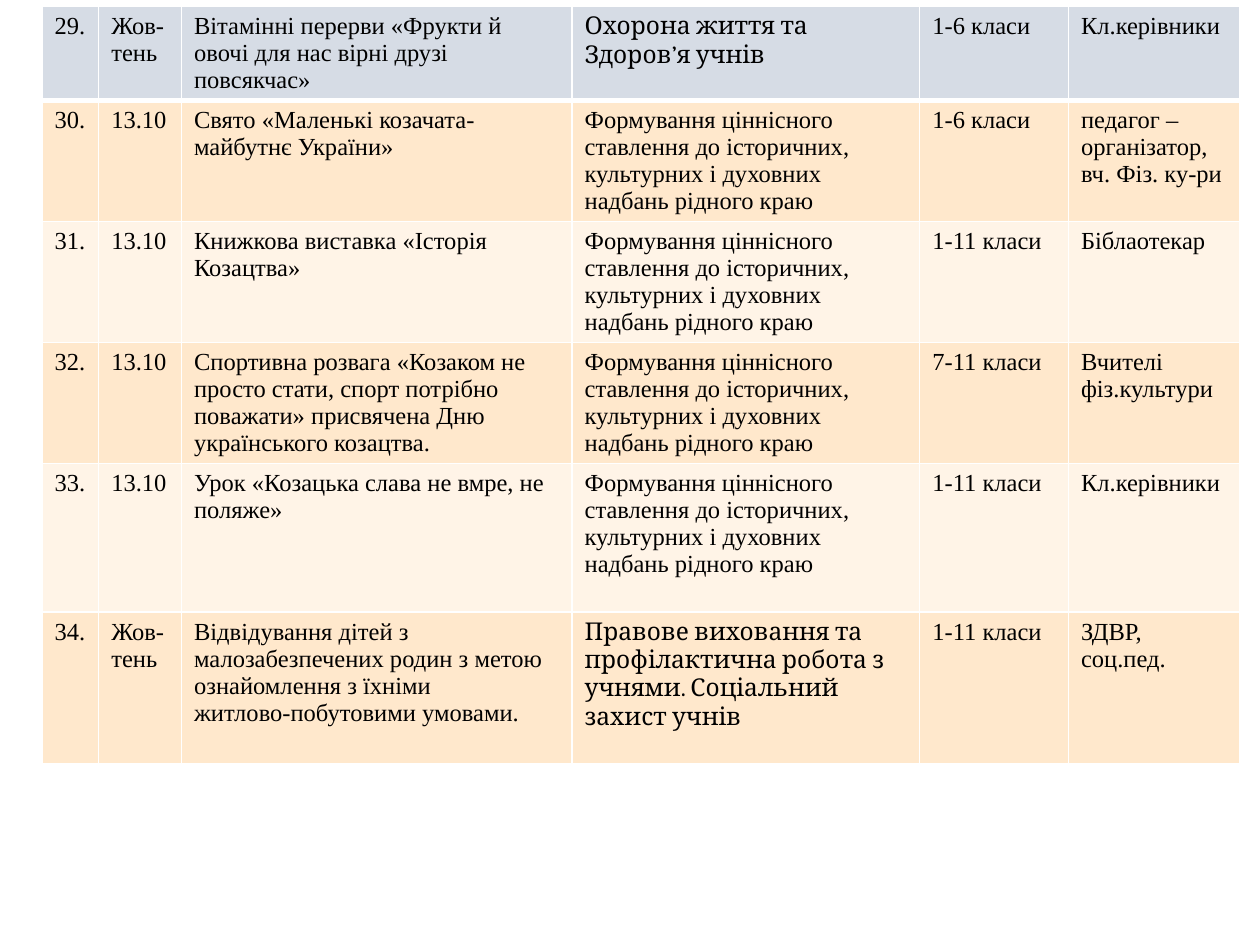
from lxml.etree import SubElement
from pptx import Presentation
from pptx.dml.color import RGBColor
from pptx.oxml.ns import qn
from pptx.util import Pt

COLORS = {"text": "000000", "border": "FFFFFF", "head": "D6DCE5",
          "dark": "FFE8CC", "light": "FFF4E7"}
FONT, GOAL_FONT = "Times New Roman", "Cambria"

# Content: number, date, event, goal, classes, responsible; "\n" splits paragraphs
HERITAGE = ("Формування ціннісного ставлення до історичних,\n"
            "культурних і духовних надбань рідного краю")
EVENTS = [
    ("29.", "Жов-тень", "Вітамінні перерви «Фрукти й овочі для нас вірні друзі повсякчас»",
     "Охорона життя та Здоров’я учнів", "1-6 класи", "Кл.керівники"),
    ("30.", "13.10", "Свято «Маленькі козачата-майбутнє України»",
     HERITAGE, "1-6 класи", "педагог –організатор, вч. Фіз. ку-ри"),
    ("31.", "13.10", "Книжкова виставка «Історія Козацтва»",
     HERITAGE, "1-11 класи", "Біблаотекар"),
    ("32.", "13.10", "Спортивна розвага «Козаком не просто стати, спорт потрібно "
     "поважати» присвячена Дню українського козацтва.",
     HERITAGE, "7-11 класи", "Вчителі фіз.культури"),
    ("33.", "13.10", "Урок «Козацька слава не вмре, не поляже»",
     HERITAGE, "1-11 класи", "Кл.керівники"),
    ("34.", "Жов-тень", "Відвідування дітей з малозабезпечених родин з метою "
     "ознайомлення з їхніми\nжитлово-побутовими умовами.",
     "Правове виховання та профілактична робота з учнями. Соціальний захист учнів",
     "1-11 класи", "ЗДВР, соц.пед."),
]
LEFT, TOP = 24, 3.75
COL_WIDTHS = [32.4, 47.3, 223.2, 198.7, 85, 97.6]
ROW_HEIGHTS = [53, 69, 69, 69, 85, 86.5]
GOAL_COL = 3


def set_borders(cell, widths):
    """Draw the cell's edges; widths maps an edge letter to points."""
    tc_pr = cell._tc.get_or_add_tcPr()
    for edge in "LRTB":
        ln = SubElement(tc_pr, qn(f"a:ln{edge}"), w=str(Pt(widths.get(edge, 1))))
        fill = SubElement(ln, qn("a:solidFill"))
        SubElement(fill, qn("a:srgbClr"), val=COLORS["border"])


def fill_cell(cell, text, font, color):
    cell.fill.solid()
    cell.fill.fore_color.rgb = RGBColor.from_string(color)
    tf = cell.text_frame
    for i, line in enumerate(text.split("\n")):
        p = tf.add_paragraph() if i else tf.paragraphs[0]
        r = p.add_run()
        r.text = line
        r.font.name, r.font.size, r.font.bold = font, Pt(14), False
        r.font.color.rgb = RGBColor.from_string(COLORS["text"])


prs = Presentation()
prs.slide_width, prs.slide_height = Pt(720), Pt(540)
s = prs.slides.add_slide(prs.slide_layouts[6])

# Events table
table = s.shapes.add_table(len(EVENTS), len(COL_WIDTHS), Pt(LEFT), Pt(TOP),
                           Pt(sum(COL_WIDTHS)), Pt(sum(ROW_HEIGHTS))).table
table.first_row = table.horz_banding = False
for column, width in zip(table.columns, COL_WIDTHS):
    column.width = Pt(width)
for row, height in zip(table.rows, ROW_HEIGHTS):
    row.height = Pt(height)

# Cells: header tint first, then alternating bands; thick line below the first row
for i, event in enumerate(EVENTS):
    band = "head" if i == 0 else "dark" if i % 2 else "light"
    widths = {0: {"B": 3}, 1: {"T": 3}}.get(i, {})
    for j, text in enumerate(event):
        cell = table.cell(i, j)
        special = j == GOAL_COL and text != HERITAGE
        set_borders(cell, widths)
        fill_cell(cell, text, GOAL_FONT if special else FONT, COLORS[band])

prs.save("out.pptx")
